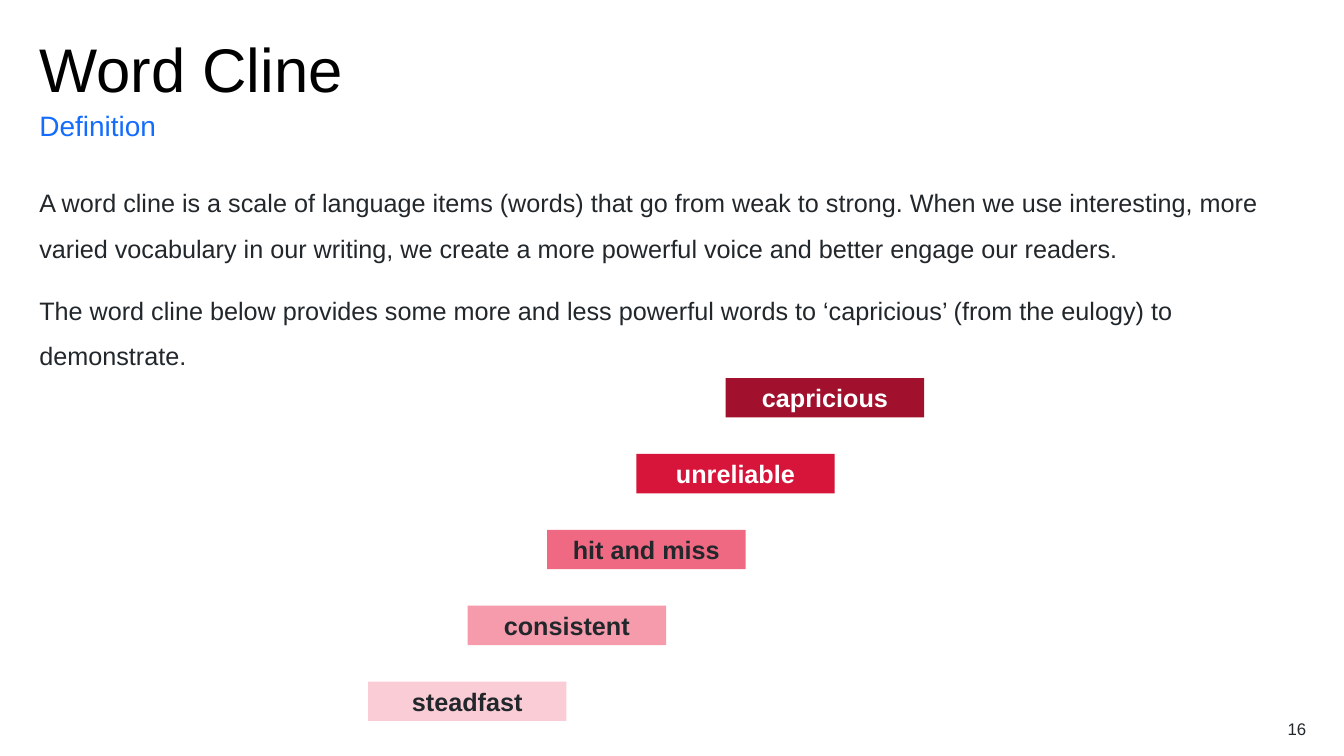
from pptx import Presentation
from pptx.dml.color import RGBColor
from pptx.enum import shapes, text
from pptx.util import Pt

BLACK = RGBColor(0x00, 0x00, 0x00)
WHITE = RGBColor(0xFF, 0xFF, 0xFF)
INK = RGBColor(0x22, 0x27, 0x2B)
BLUE = RGBColor(0x14, 0x6C, 0xFD)
CRIMSON = RGBColor(0xA1, 0x10, 0x2C)
RED = RGBColor(0xD7, 0x15, 0x3A)
ROSE = RGBColor(0xF0, 0x69, 0x83)
PINK = RGBColor(0xF5, 0x9B, 0xAC)
BLUSH = RGBColor(0xFA, 0xCD, 0xD6)

MARGIN, CONTENT_WIDTH = 28.1, 904.3
STEP_TOP, STEP_PITCH = 270, 54.2
STEP_WIDTH, STEP_HEIGHT = 141.8, 28.2

# Strongest word first: word, left edge, fill, font colour
CLINE = [
    ("capricious", 518.4, CRIMSON, WHITE),
    ("unreliable", 454.5, RED, WHITE),
    ("hit and miss", 390.8, ROSE, INK),
    ("consistent", 334, PINK, INK),
    ("steadfast", 262.9, BLUSH, INK),
]

DEFINITION = [
    "A word cline is a scale of language items (words) that go from weak to "
    "strong. When we use interesting, more varied vocabulary in our writing, "
    "we create a more powerful voice and better engage our readers.",
    "The word cline below provides some more and less powerful words to "
    "‘capricious’ (from the eulogy) to demonstrate.",
]


def apply(target, formats):
    for name, value in formats.items():
        setattr(target, name, value)


def write(shape, lines, size, color, bold=False,
          anchor=text.MSO_ANCHOR.TOP, **paragraph_formats):
    frame = shape.text_frame
    apply(frame, {"margin_left": 0, "margin_right": 0, "margin_top": 0,
                  "margin_bottom": 0, "word_wrap": True,
                  "auto_size": text.MSO_AUTO_SIZE.NONE,
                  "vertical_anchor": anchor})
    frame.text = "\n".join(lines)
    for paragraph in frame.paragraphs:
        apply(paragraph, {"alignment": text.PP_ALIGN.LEFT, **paragraph_formats})
        for run in paragraph.runs:
            apply(run.font, {"name": "Arial", "size": Pt(size), "bold": bold})
            run.font.color.rgb = color


def add_title(slide, wording):
    title = slide.shapes.title
    apply(title, {"left": Pt(MARGIN), "top": Pt(28.1),
                  "width": Pt(CONTENT_WIDTH), "height": Pt(43.2)})
    write(title, [wording], 44, BLACK, line_spacing=0.9)


def add_text(slide, box, lines, size, color, **formats):
    textbox = slide.shapes.add_textbox(*map(Pt, box))
    write(textbox, lines, size, color, **formats)


def add_step(slide, left, top, word, fill, color):
    step = slide.shapes.add_shape(shapes.MSO_SHAPE.RECTANGLE, Pt(left), Pt(top),
                                  Pt(STEP_WIDTH), Pt(STEP_HEIGHT))
    step.shadow.inherit = False
    step.fill.solid()
    step.fill.fore_color.rgb = fill
    step.line.fill.background()
    write(step, [word], 18, color, bold=True, anchor=text.MSO_ANCHOR.MIDDLE,
          alignment=text.PP_ALIGN.CENTER)


def main():
    deck = Presentation()
    apply(deck, {"slide_width": Pt(960), "slide_height": Pt(540)})
    slide = deck.slides.add_slide(deck.slide_layouts[5])

    # Heading and definition
    body_spacing = {"line_spacing": 1.5, "space_after": Pt(12)}
    add_title(slide, "Word Cline")
    add_text(slide, (MARGIN, 77, CONTENT_WIDTH, 24.5), ["Definition"], 20, BLUE,
             anchor=text.MSO_ANCHOR.BOTTOM, **body_spacing)
    add_text(slide, (MARGIN, 123.1, CONTENT_WIDTH, 137.5), DEFINITION, 18, INK,
             **body_spacing)

    # Word cline, from strong to weak
    for row, (word, left, fill, color) in enumerate(CLINE):
        add_step(slide, left, STEP_TOP + row * STEP_PITCH, word, fill, color)

    # Page number
    add_text(slide, (876.2, 513.4, 56.9, 14.4), ["16"], 12, INK,
             alignment=text.PP_ALIGN.RIGHT)

    deck.save("out.pptx")


if __name__ == "__main__":
    main()
